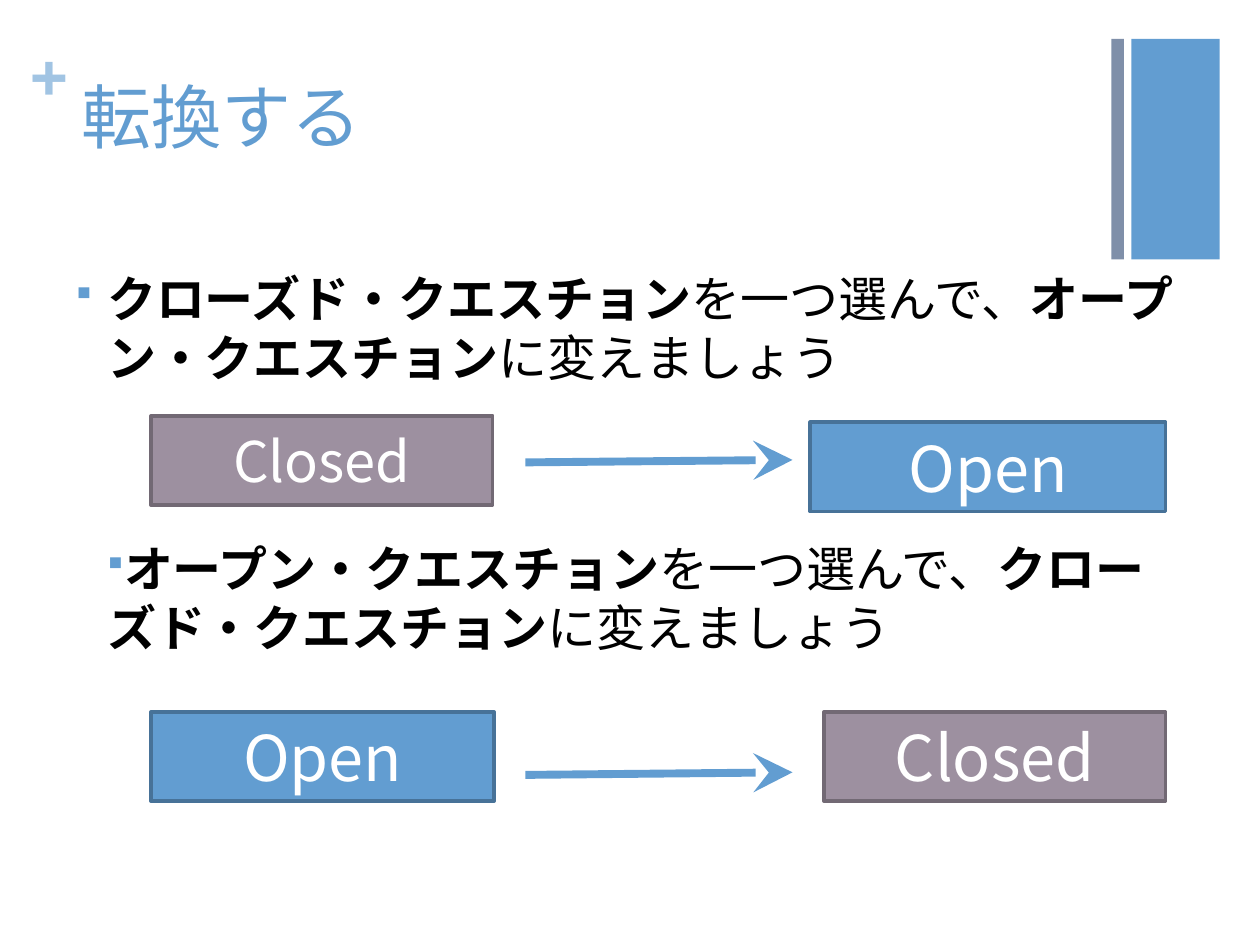
from lxml.etree import SubElement
from pptx import Presentation
from pptx.dml.color import RGBColor
from pptx.enum.shapes import MSO_CONNECTOR, MSO_SHAPE
from pptx.enum.text import MSO_ANCHOR, MSO_AUTO_SIZE, PP_ALIGN
from pptx.oxml.ns import qn
from pptx.util import Inches, Pt

BLUE = RGBColor(0x62, 0x9D, 0xD1)
DARK_BLUE = RGBColor(0x47, 0x72, 0x98)
PALE_BLUE = RGBColor(0xA1, 0xC4, 0xE3)
SLATE = RGBColor(0x7F, 0x8F, 0xA9)
MAUVE = RGBColor(0x9D, 0x90, 0xA0)
DARK_MAUVE = RGBColor(0x72, 0x69, 0x74)
BLACK = RGBColor(0, 0, 0)
WHITE = RGBColor(0xFF, 0xFF, 0xFF)
SANS = "Noto Sans CJK JP"
SERIF = "TeX Gyre Bonum"
WIDTH, HEIGHT = Inches(10), Inches(7.5)
STYLES = {"Closed": (MAUVE, DARK_MAUVE), "Open": (BLUE, DARK_BLUE)}


def across(percent):
    """Return a share of the slide's width."""
    return round(WIDTH * percent / 100)


def down(percent):
    """Return a share of the slide's height."""
    return round(HEIGHT * percent / 100)


def area(left, top, width, height):
    """Return a rectangle given in percent of the slide."""
    return across(left), down(top), across(width), down(height)


def format_span(span, size, color, bold=False, face=SANS):
    """Set the face, size, colour and weight of a run."""
    font = span.font
    font.name, font.size, font.bold = face, Pt(size), bold
    font.color.rgb = color
    SubElement(span._r.get_or_add_rPr(), qn("a:ea"), typeface=face)


def move_placeholder(holder, place):
    """Place a placeholder with its text at the top left."""
    holder.left, holder.top, holder.width, holder.height = place
    frame = holder.text_frame
    frame.auto_size = MSO_AUTO_SIZE.NONE
    frame.vertical_anchor = MSO_ANCHOR.TOP
    return frame


def add_title(page, text):
    """Fill the title placeholder."""
    frame = move_placeholder(page.shapes.title, area(5.5, 7.07, 82.6, 16.27))
    frame.text = text
    para = frame.paragraphs[0]
    para.alignment = PP_ALIGN.LEFT
    format_span(para.runs[0], 40, BLUE)


def add_bullet(para, indent):
    """Give a paragraph a small blue square."""
    properties = para._p.get_or_add_pPr()
    properties.set("marL", str(Inches(0.25)))
    properties.set("indent", str(Inches(indent)))
    color = SubElement(properties, qn("a:buClr"))
    SubElement(color, qn("a:srgbClr"), val=str(BLUE))
    SubElement(properties, qn("a:buSzPct"), val="75000")
    SubElement(properties, qn("a:buFont"), typeface="Wingdings", charset="2")
    SubElement(properties, qn("a:buChar"), char="§")


def add_tasks(page, tasks):
    """Fill the body placeholder with one bullet per task."""
    frame = move_placeholder(page.placeholders[1], area(5, 27.73, 90, 60.27))
    for number, (source, target, indent, gap) in enumerate(tasks):
        para = frame.add_paragraph() if number else frame.paragraphs[0]
        para.space_before = Pt(gap)
        add_bullet(para, indent)
        pieces = (source, "を一つ選んで、", target, "に変えましょう")
        for position, piece in enumerate(pieces):
            span = para.add_run()
            span.text = piece
            format_span(span, 28, BLACK, bold=position % 2 == 0)


def add_bar(page, place, fill, outline=None):
    """Add a flat rectangle."""
    bar = page.shapes.add_shape(MSO_SHAPE.RECTANGLE, *place)
    bar.shadow.inherit = False
    bar.fill.solid()
    bar.fill.fore_color.rgb = fill
    if outline is None:
        bar.line.fill.background()
    else:
        bar.line.color.rgb, bar.line.width = outline, Pt(2)
    return bar


def add_label(page, text, place, size=36):
    """Add a question box in the colours of its type."""
    box = add_bar(page, place, *STYLES[text])
    frame = box.text_frame
    frame.text, frame.vertical_anchor = text, MSO_ANCHOR.MIDDLE
    para = frame.paragraphs[0]
    para.alignment = PP_ALIGN.CENTER
    format_span(para.runs[0], size, WHITE)


def add_arrow(page, start, end):
    """Add a slightly rising arrow between two boxes."""
    arrow = page.shapes.add_connector(
        MSO_CONNECTOR.STRAIGHT, across(41.7), down(start), across(62.9), down(end))
    arrow.line.color.rgb, arrow.line.width = BLUE, Pt(4.5)
    SubElement(arrow.line._get_or_add_ln(), qn("a:tailEnd"),
               type="stealth", w="lg", len="lg")
    SubElement(arrow._element.spPr, qn("a:effectLst"))


def add_plus(page):
    """Add the plus sign beside the title."""
    box = page.shapes.add_textbox(*area(2.4, 3.33, 2.9, 8.13))
    frame = box.text_frame
    frame.margin_left = frame.margin_right = 0
    frame.margin_top = frame.margin_bottom = 0
    frame.word_wrap = True
    frame.text = "+"
    format_span(frame.paragraphs[0].runs[0], 36, PALE_BLUE, True, SERIF)


def main():
    """Build the slide and save it."""
    deck = Presentation()
    deck.slide_width, deck.slide_height = WIDTH, HEIGHT
    page = deck.slides.add_slide(deck.slide_layouts[1])
    add_bar(page, area(89.8, 4.13, 7, 23.33), BLUE)
    add_plus(page)
    add_bar(page, area(88.2, 4.13, 1, 23.33), SLATE)
    add_title(page, "転換する")
    closed, opened = "クローズド・クエスチョン", "オープン・クエスチョン"
    add_tasks(page, [(closed, opened, -0.25, 0), (opened, closed, 0, 87)])
    add_label(page, "Closed", area(12, 44, 27.1, 9.47), 32)
    add_arrow(page, 48.93, 48.67)
    add_label(page, "Open", area(64.3, 44.67, 28.2, 9.47))
    add_label(page, "Closed", area(65.4, 75.33, 27.1, 9.47))
    add_arrow(page, 82, 81.73)
    add_label(page, "Open", area(12, 75.33, 27.2, 9.47))
    deck.save("out.pptx")


if __name__ == "__main__":
    main()
